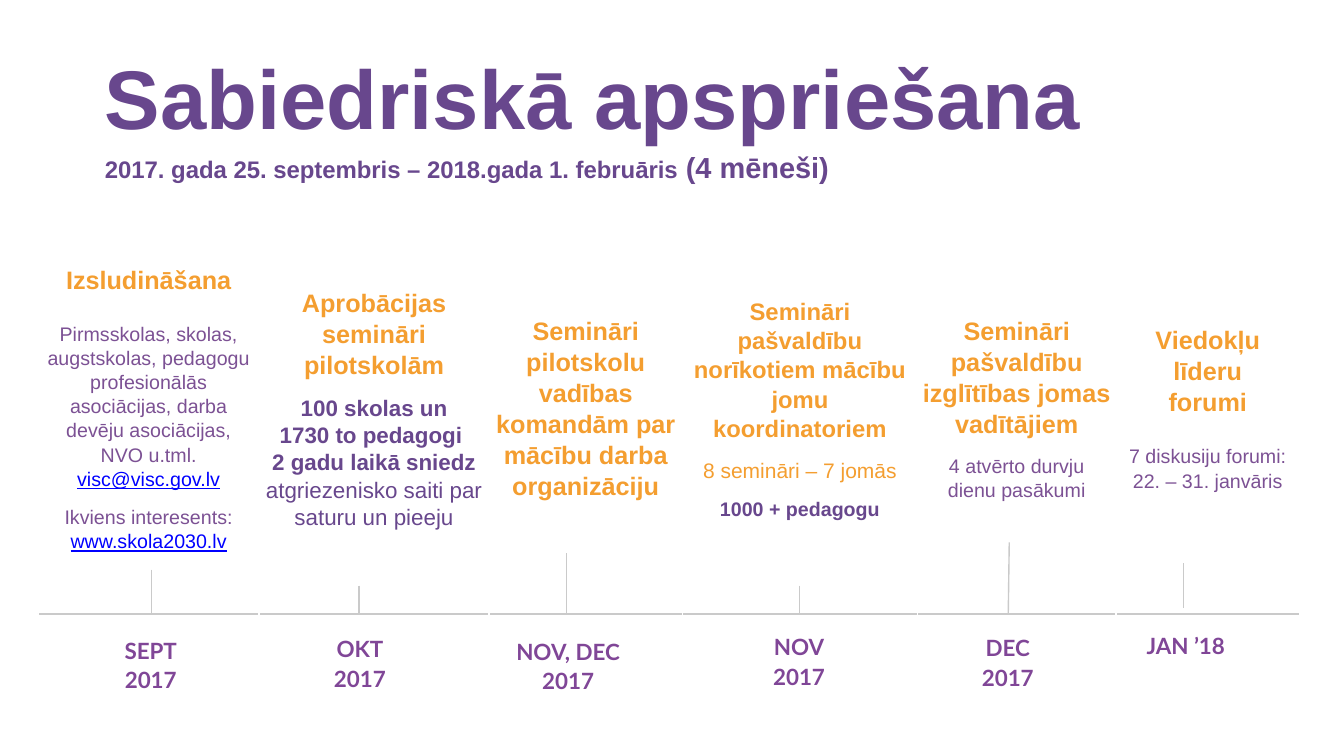
from lxml import etree
from pptx import Presentation
from pptx.dml.color import RGBColor
from pptx.enum.shapes import MSO_CONNECTOR as Link
from pptx.enum.text import MSO_ANCHOR as Anchor, MSO_AUTO_SIZE as Auto, PP_ALIGN as Align
from pptx.oxml import parse_xml
from pptx.oxml.ns import nsdecls, qn
from pptx.util import Inches, Pt

PURPLE = RGBColor(0x68, 0x47, 0x8D)
VIOLET = RGBColor(0x7C, 0x51, 0x94)
PLUM = RGBColor(0x80, 0x46, 0x97)
ORANGE = RGBColor(0xF4, 0x9E, 0x30)
BLUE = RGBColor(0x00, 0x00, 0xFF)
GREY = RGBColor(0xCA, 0xCA, 0xCA)
PAD = Inches(0.05)


def write(para, runs, face="Arial", gap=0, align=Align.CENTER):
    """Fill a paragraph with (text, size, colour, bold) runs; blue ones are underlined."""
    para.alignment = align
    para.line_spacing = 1.1
    para.space_before = Pt(gap)
    for text, size, color, bold in runs:
        for i, line in enumerate(text.split("\n")):
            if i:
                para.add_line_break()
            if not line:
                continue
            run = para.add_run()
            run.text = line
            font = para.font if len(runs) == 1 else run.font
            font.name = face
            font.size = Pt(size)
            font.bold = bold
            font.color.rgb = color
            if color == BLUE:
                font.underline = True


def inset(box):
    box.margin_left = box.margin_right = box.margin_top = box.margin_bottom = PAD


prs = Presentation()
prs.slide_width, prs.slide_height = Inches(13.33), Inches(7.5)
slide = prs.slides.add_slide(prs.slide_layouts[5])
shapes = slide.shapes

# Title
title = shapes.title
title.left, title.top = Inches(0.99), Inches(0.42)
title.width, title.height = Inches(10.51), Inches(1.34)
frame = title.text_frame
frame.word_wrap = True
frame.auto_size = Auto.NONE
frame.vertical_anchor = Anchor.MIDDLE
inset(frame)
write(frame.paragraphs[0], [
    ("Sabiedriskā apspriešana\n", 59.4, PURPLE, True),
    ("2017. gada 25. septembris – 2018.gada 1. februāris", 17.1, PURPLE, True),
    (" (4 mēneši)", 20.7, PURPLE, True),
], align=Align.LEFT)

# Events: column width, then paragraphs of (space before, runs)
events = [
    (2.19, [
        (0, [("Izsludināšana", 18, ORANGE, True)]),
        (19, [("Pirmsskolas, skolas, augstskolas, pedagogu profesionālās asociācijas, "
               "darba devēju asociācijas, NVO u.tml.\n", 14, VIOLET, False),
              ("visc@visc.gov.lv", 14, BLUE, False)]),
        (10, [("Ikviens interesents:\n", 14, VIOLET, False),
              ("www.skola2030.lv", 14, BLUE, False)]),
    ]),
    (2.28, [
        (0, [("Aprobācijas semināri pilotskolām", 18, ORANGE, True)]),
        (10, [("100 skolas un\n1730 to pedagogi \n2 gadu laikā sniedz ", 16, PURPLE, True),
              ("atgriezenisko saiti par saturu un pieeju", 16, PURPLE, False)]),
    ]),
    (1.92, [
        (0, [("Semināri pilotskolu vadības komandām par mācību darba organizāciju",
              18, ORANGE, True)]),
    ]),
    (2.33, [
        (0, [("Semināri pašvaldību norīkotiem mācību jomu koordinatoriem", 17, ORANGE, True)]),
        (10, [("8 semināri – 7 jomās", 15, ORANGE, False)]),
        (10, [("1000 + pedagogu", 14, PURPLE, True)]),
    ]),
    (1.97, [
        (0, [("Semināri pašvaldību izglītības jomas vadītājiem", 18, ORANGE, True)]),
        (10, [("4 atvērto durvju dienu pasākumi", 14, VIOLET, False)]),
    ]),
    (1.82, [
        (0, [("Viedokļu līderu\nforumi", 18, ORANGE, True)]),
        (19, [("7 diskusiju forumi:\n22. – 31. janvāris", 14, VIOLET, False)]),
    ]),
]
table = shapes.add_table(1, len(events), Inches(0.38), Inches(2.01),
                         Inches(12.51), Inches(4.08)).table
table.first_row = table.horz_banding = False
for col, (width, paras) in enumerate(events):
    table.columns[col].width = Inches(width)
    cell = table.cell(0, col)
    cell.vertical_anchor = Anchor.MIDDLE
    inset(cell)
    frame = cell.text_frame
    for i, (gap, runs) in enumerate(paras):
        para = frame.add_paragraph() if i else frame.paragraphs[0]
        write(para, runs, gap=gap)
    cell.fill.background()
    edge = parse_xml(f'<a:lnB {nsdecls("a")} w="{Pt(1.5)}"><a:solidFill>'
                     f'<a:srgbClr val="{GREY}"/></a:solidFill></a:lnB>')
    cell._tc.tcPr.insert(0, edge)

# Dates: text, left, top, width, wrap
dates = [
    ("SEPT\n2017", 1.17, 6.24, 0.65, False),
    ("OKT\n2017", 3.25, 6.23, 0.64, False),
    ("NOV, DEC\n2017", 5.03, 6.25, 1.21, False),
    ("NOV\n2017", 6.95, 6.21, 1.95, True),
    ("DEC\n2017", 8.9, 6.22, 2.19, True),
    ("JAN ’18", 11.3, 6.2, 0.92, False),
]
for text, left, top, width, wrap in dates:
    box = shapes.add_textbox(Inches(left), Inches(top), Inches(width), Inches(0.69))
    frame = box.text_frame
    frame.word_wrap = wrap
    frame.auto_size = Auto.SHAPE_TO_FIT_TEXT
    inset(frame)
    write(frame.paragraphs[0], [(text, 16, PLUM, True)], face="Lato")

# Ticks above the time line: top x, top y, bottom x, bottom y
ticks = [
    (1.5, 5.65, 1.5, 6.09),
    (3.56, 5.81, 3.56, 6.09),
    (5.62, 5.49, 5.62, 6.09),
    (7.93, 5.81, 7.93, 6.09),
    (10.01, 5.38, 10, 6.09),
    (11.74, 5.59, 11.74, 6.03),
]
for ends in ticks:
    tick = shapes.add_connector(Link.STRAIGHT, *map(Inches, ends))
    tick.line.color.rgb = GREY
    tick.line.width = Pt(1)
    etree.SubElement(tick._element.spPr, qn("a:effectLst"))

prs.save("out.pptx")
